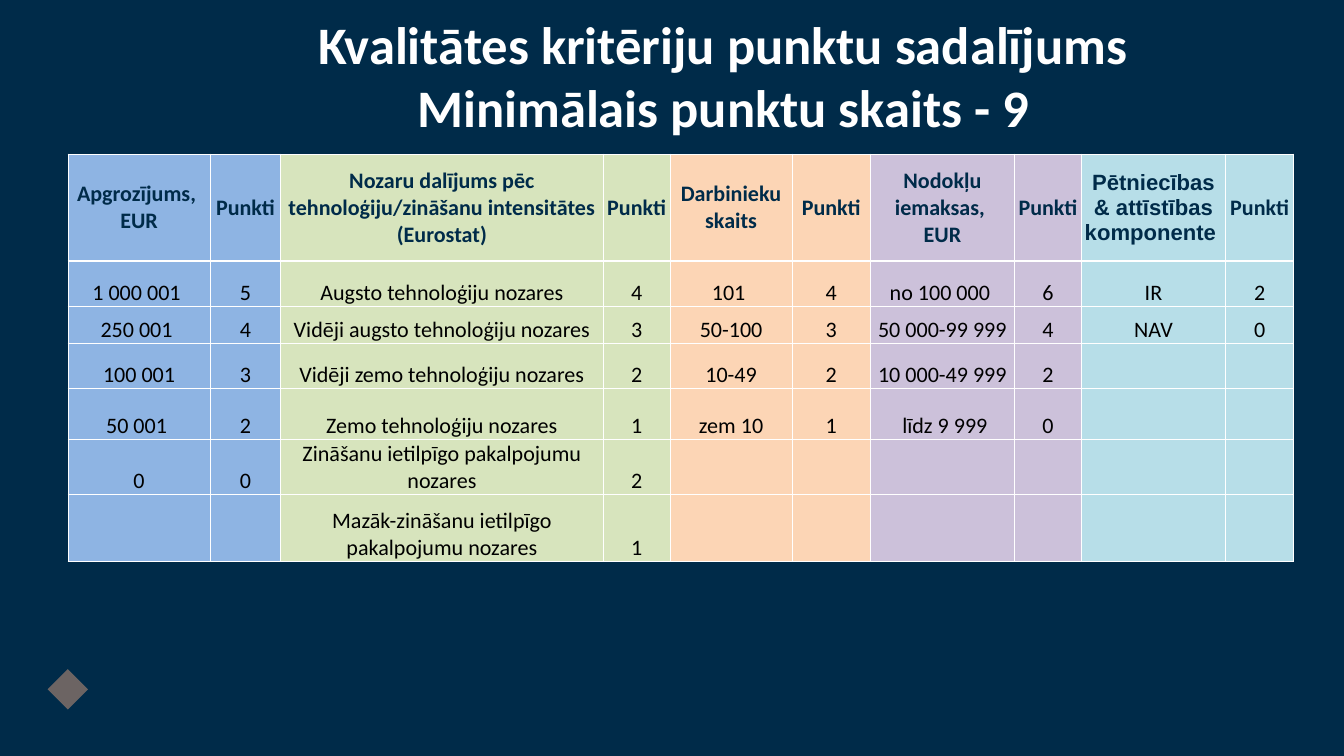
"""Builds the slide with the table of quality criteria points."""
from dataclasses import dataclass

from lxml import etree
from pptx import Presentation
from pptx import util as u
from pptx.dml.color import RGBColor
from pptx.enum import shapes, text
from pptx.oxml import ns


@dataclass(frozen=True)
class Theme:
    background: str = "002B49"
    light: str = "FFFFFF"
    body: str = "000000"
    mark: str = "6C6463"
    font: str = "Calibri"
    alt_font: str = "Arial"
    title_size: int = 62
    table_size: int = 26
    rule: int = 1
    header_rule: int = 3


@dataclass(frozen=True)
class Style:
    font: str
    size: int
    color: str
    bold: bool = False


@dataclass(frozen=True)
class Criterion:
    heading: str
    widths: tuple[float, float]
    fill: str
    levels: tuple[tuple[str, str], ...]
    heading_font: str = Theme.font


THEME = Theme()
ROW_HEIGHTS = (4.45, 1.88, 1.55, 1.85, 2.13, 2.27, 2.77)
CRITERIA = (
    Criterion("Apgrozījums, \nEUR", (5.92, 2.92), "8EB4E3",
              (("1 000 001 ", "5"), ("250 001 ", "4"), ("100 001", "3"),
               ("50 001 ", "2"), ("0", "0"))),
    Criterion("Nozaru dalījums pēc tehnoloģiju/zināšanu intensitātes (Eurostat)",
              (13.41, 2.77), "D7E4BD",
              (("Augsto tehnoloģiju nozares", "4"),
               ("Vidēji augsto tehnoloģiju nozares", "3"),
               ("Vidēji zemo tehnoloģiju nozares", "2"),
               ("Zemo tehnoloģiju nozares", "1"),
               ("Zināšanu ietilpīgo pakalpojumu nozares", "2"),
               ("Mazāk-zināšanu ietilpīgo pakalpojumu nozares", "1"))),
    Criterion("Darbinieku skaits", (5.08, 3.24), "FCD5B5",
              (("101 ", "4"), ("50-100", "3"), ("10-49", "2"), (" zem 10 ", "1"))),
    Criterion("Nodokļu iemaksas, \nEUR", (6, 2.77), "CCC1DA",
              (("no 100 000 ", "6"), ("50 000-99 999", "4"),
               ("10 000-49 999", "2"), (" līdz 9 999", "0"))),
    Criterion("Pētniecības & attīstības komponente ", (6, 2.82), "B7DEE8",
              (("IR", "2"), ("NAV", "0")), THEME.alt_font),
)


def rgb(color: str) -> RGBColor:
    return RGBColor.from_string(color)


def write(paragraph, words: str, style: Style) -> None:
    paragraph.alignment = text.PP_ALIGN.CENTER
    for index, line in enumerate(words.split("\n")):
        if index:
            paragraph.add_line_break()
        run = paragraph.add_run()
        run.text = line
        run.font.name = style.font
        run.font.size = u.Pt(style.size)
        run.font.bold = style.bold
        run.font.color.rgb = rgb(style.color)


def draw_header_borders(cell) -> None:
    properties = cell._tc.get_or_add_tcPr()
    widths = (THEME.rule, THEME.rule, THEME.rule, THEME.header_rule)
    for side, width in zip("LRTB", widths):
        line = etree.SubElement(properties, ns.qn(f"a:ln{side}"), w=str(u.Pt(width)))
        fill = etree.SubElement(line, ns.qn("a:solidFill"))
        etree.SubElement(fill, ns.qn("a:srgbClr"), val=THEME.light)


def fill_cell(cell, words: str, fill: str, style: Style, is_header: bool) -> None:
    if is_header:
        draw_header_borders(cell)
    cell.margin_left = cell.margin_right = cell.margin_top = cell.margin_bottom = 0
    cell.fill.solid()
    cell.fill.fore_color.rgb = rgb(fill)
    cell.vertical_anchor = text.MSO_ANCHOR.MIDDLE if is_header else text.MSO_ANCHOR.BOTTOM
    if words:
        write(cell.text_frame.paragraphs[0], words, style)


def add_title(slide) -> None:
    title = slide.shapes.title
    title.left, title.top = u.Cm(10.24), u.Cm(0.36)
    title.width, title.height = u.Cm(39.65), u.Cm(7.24)
    frame = title.text_frame
    frame.word_wrap = True
    frame.auto_size = text.MSO_AUTO_SIZE.NONE
    frame.vertical_anchor = text.MSO_ANCHOR.TOP
    write(frame.paragraphs[0],
          "Kvalitātes kritēriju punktu sadalījums Minimālais punktu skaits - 9",
          Style(THEME.font, THEME.title_size, THEME.light, True))


def add_points_table(slide) -> None:
    widths = [width for criterion in CRITERIA for width in criterion.widths]
    points = slide.shapes.add_table(
        len(ROW_HEIGHTS), len(widths), u.Cm(2.82), u.Cm(6.4),
        u.Cm(sum(widths)), u.Cm(sum(ROW_HEIGHTS))).table
    points.horz_banding = False
    points.first_row = False
    for column, width in zip(points.columns, widths):
        column.width = u.Cm(width)
    for row, height in zip(points.rows, ROW_HEIGHTS):
        row.height = u.Cm(height)

    body = Style(THEME.font, THEME.table_size, THEME.body)
    for group, criterion in enumerate(CRITERIA):
        blanks = (("", ""),) * (len(ROW_HEIGHTS) - 1 - len(criterion.levels))
        entries = ((criterion.heading, "Punkti"), *criterion.levels, *blanks)
        fonts = (criterion.heading_font, THEME.font)
        for row, entry in enumerate(entries):
            for offset, (words, font) in enumerate(zip(entry, fonts)):
                header = Style(font, THEME.table_size, THEME.background, True)
                fill_cell(points.cell(row, 2 * group + offset), words,
                          criterion.fill, body if row else header, row == 0)


def add_mark(slide) -> None:
    mark = slide.shapes.add_shape(shapes.MSO_SHAPE.DIAMOND, u.Cm(1.98), u.Cm(27.79),
                                  u.Cm(1.68), u.Cm(1.68))
    mark.shadow.inherit = False
    mark.fill.solid()
    mark.fill.fore_color.rgb = rgb(THEME.mark)
    mark.line.fill.background()


def main() -> None:
    deck = Presentation()
    deck.slide_width, deck.slide_height = u.Pt(1583), u.Pt(890)
    slide = deck.slides.add_slide(deck.slide_layouts.get_by_name("Title Only"))
    slide.background.fill.solid()
    slide.background.fill.fore_color.rgb = rgb(THEME.background)
    add_title(slide)
    add_points_table(slide)
    add_mark(slide)
    deck.save("out.pptx")


if __name__ == "__main__":
    main()
